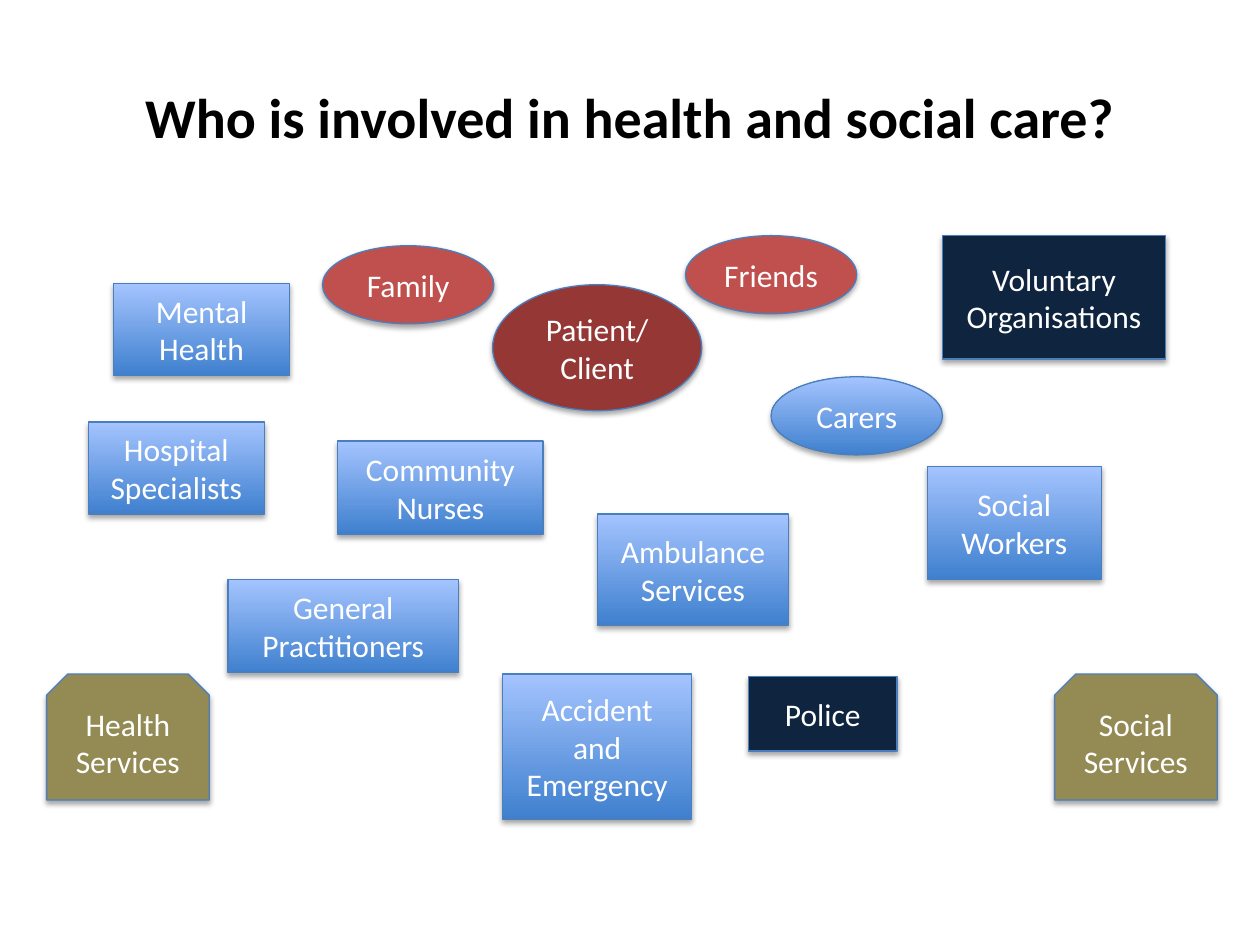
from lxml import etree
from pptx import Presentation
from pptx.dml.color import RGBColor
from pptx.enum.shapes import MSO_SHAPE
from pptx.enum.text import MSO_ANCHOR, PP_ALIGN
from pptx.oxml.ns import qn
from pptx.util import Inches, Pt

RECT = MSO_SHAPE.RECTANGLE
OVAL = MSO_SHAPE.OVAL
SNIP = MSO_SHAPE.SNIP_2_SAME_RECTANGLE
MIDDLE = MSO_ANCHOR.MIDDLE
CENTER = PP_ALIGN.CENTER

BLACK = RGBColor(0x00, 0x00, 0x00)
WHITE = RGBColor(0xFF, 0xFF, 0xFF)
EDGE = RGBColor(0x4B, 0x7E, 0xBC)
MAROON = RGBColor(0x95, 0x37, 0x35)
RED = RGBColor(0xC0, 0x50, 0x4D)
NAVY = RGBColor(0x0F, 0x24, 0x3E)
OLIVE = RGBColor(0x94, 0x8A, 0x54)
BLUES = (RGBColor(0x3F, 0x80, 0xCE), RGBColor(0xA4, 0xC4, 0xFF))

FONT = "Calibri"
TITLE = "Who is involved in health and social care?"

# Groups that share an outline and a fill: (text, left, top, width, height)
GROUPS = [
    (OVAL, MAROON, [("Patient/Client", 3.91, 2.26, 1.66, 1)]),
    (OVAL, RED, [
        ("Family", 2.56, 1.95, 1.36, 0.62),
        ("Friends", 5.44, 1.87, 1.36, 0.62),
    ]),
    (OVAL, BLUES, [("Carers", 6.12, 2.99, 1.36, 0.62)]),
    (RECT, BLUES, [
        ("Mental\nHealth", 0.9, 2.25, 1.4, 0.73),
        ("Hospital\nSpecialists", 0.7, 3.35, 1.4, 0.73),
        ("Community Nurses", 2.68, 3.5, 1.63, 0.74),
        ("General\nPractitioners", 1.81, 4.6, 1.83, 0.74),
        ("Ambulance\nServices", 4.74, 4.08, 1.52, 0.88),
        ("Accident\nand Emergency", 3.99, 5.35, 1.5, 1.15),
        ("Social\nWorkers", 7.36, 3.7, 1.38, 0.9),
    ]),
    (RECT, NAVY, [
        ("Voluntary Organisations", 7.48, 1.87, 1.77, 0.98),
        ("Police", 5.94, 5.37, 1.18, 0.59),
    ]),
    (SNIP, OLIVE, [
        ("Health\nServices", 0.37, 5.35, 1.29, 1),
        ("Social\nServices", 8.37, 5.35, 1.29, 1),
    ]),
]


def write(shape, text, size, color, bold=False):
    frame = shape.text_frame
    frame.word_wrap = True
    frame.vertical_anchor = MIDDLE
    frame.text = text
    for para in frame.paragraphs:
        para.alignment = CENTER
        font = para.font
        font.name, font.size, font.bold = FONT, Pt(size), bold
        font.color.rgb = color


def paint(shape, fill):
    """Fill with one colour, or with a gradient from bottom to top."""
    if fill is BLUES:
        shape.fill.gradient()
        shape.fill.gradient_angle = 90
        for stop, color in zip(shape.fill.gradient_stops, fill):
            stop.color.rgb = color
    else:
        shape.fill.solid()
        shape.fill.fore_color.rgb = fill
    shape.line.color.rgb = EDGE
    shape.line.width = Pt(0.75)


def shade(shape):
    """Add a soft shadow that falls straight down."""
    shape.shadow.inherit = False
    effects = shape.element.spPr.find(qn("a:effectLst"))
    outer = etree.SubElement(
        effects, qn("a:outerShdw"), blurRad=str(Pt(3.1)), dist=str(Pt(1.8)),
        dir="5400000", rotWithShape="0")
    color = etree.SubElement(outer, qn("a:srgbClr"), val=str(BLACK))
    etree.SubElement(color, qn("a:alpha"), val="35000")


def main():
    deck = Presentation()
    deck.slide_width, deck.slide_height = Inches(10), Inches(7.5)
    shapes = deck.slides.add_slide(deck.slide_layouts[6]).shapes

    title = shapes.add_textbox(Inches(0.5), Inches(0.3), Inches(9), Inches(1.25))
    write(title, TITLE, 32, BLACK, bold=True)

    for kind, fill, items in GROUPS:
        for text, *box in items:
            shape = shapes.add_shape(kind, *map(Inches, box))
            paint(shape, fill)
            shade(shape)
            write(shape, text, 18, WHITE)

    deck.save("out.pptx")


if __name__ == "__main__":
    main()
